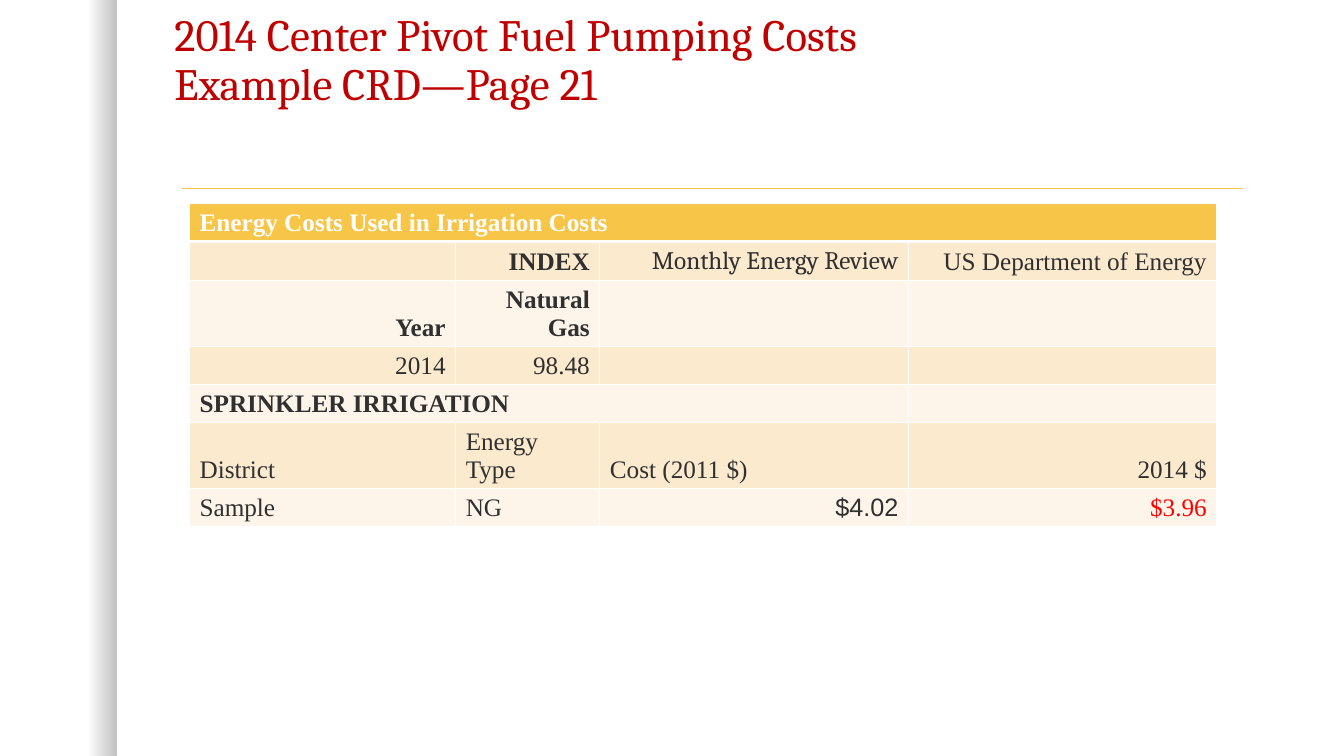
from lxml.etree import SubElement
from pptx import Presentation
from pptx.dml.color import RGBColor
from pptx.enum.shapes import MSO_CONNECTOR, MSO_SHAPE
from pptx.enum.text import MSO_ANCHOR, MSO_AUTO_SIZE, PP_ALIGN
from pptx.oxml.ns import qn
from pptx.util import Inches, Pt

GOLD, WHITE, INK, RED = "F7C547", "FFFFFF", "303030", "FF0000"
BANDS = ("FDF5E9", "FCEACF")
SERIF = "Times New Roman"
LEFT, RIGHT = PP_ALIGN.LEFT, PP_ALIGN.RIGHT

COLUMN_WIDTHS = (2.64, 1.43, 3.06, 3.06)
ROW_HEIGHT = 0.33
MERGED_COLUMNS = {0: 4, 4: 3}  # row: number of columns its first cell spans
ENERGY_COSTS = (
    ("Energy Costs Used in Irrigation Costs", "", "", ""),
    ("", "INDEX", "Monthly Energy Review", "US Department of Energy"),
    ("Year", "Natural Gas", "", ""),
    ("2014", "98.48", "", ""),
    ("SPRINKLER IRRIGATION", "", "", ""),
    ("District", "Energy Type", "Cost (2011 $)", "2014 $"),
    ("Sample", "NG", "$4.02", "$3.96"),
)
BOLD_TEXTS = {ENERGY_COSTS[0][0], "INDEX", "Year", "Natural Gas", "SPRINKLER IRRIGATION"}
LEFT_TEXTS = {ENERGY_COSTS[0][0], "SPRINKLER IRRIGATION", "District", "Energy Type",
              "Cost (2011 $)", "Sample", "NG"}
SPECIAL_FONTS = {"Monthly Energy Review": "Cambria", "$4.02": "Arial"}


def color(hex_value):
    return RGBColor.from_string(hex_value)


def add_edge_shade(slide, left, top, width, height):
    """Fade from clear to a quarter-black along the right edge of the box."""
    shade = slide.shapes.add_shape(
        MSO_SHAPE.RECTANGLE, Inches(left), Inches(top), Inches(width), Inches(height))
    shade.shadow.inherit = False
    shade.line.fill.background()
    shade.fill.gradient()
    shade.fill.gradient_angle = 0
    for stop, (position, opacity) in zip(shade.fill.gradient_stops, ((0.75, 0), (1, 25))):
        stop.position = position
        stop.color.rgb = color("000000")
        stop.color.brightness = 0
    for tone, opacity in zip(shade.element.spPr.iter(qn("a:srgbClr")), (0, 25)):
        SubElement(tone, qn("a:alpha"), val=str(opacity * 1000))


def add_rule(slide, left, top, width):
    rule = slide.shapes.add_connector(
        MSO_CONNECTOR.STRAIGHT, Inches(left), Inches(top), Inches(left + width), Inches(top))
    rule.line.color.rgb = color(GOLD)
    rule.line.width = Pt(1)
    SubElement(rule.element.spPr, qn("a:effectLst"))


def place_title(slide, lines, left, top, width, height):
    title = slide.shapes.title
    title.left, title.top = Inches(left), Inches(top)
    title.width, title.height = Inches(width), Inches(height)
    frame = title.text_frame
    frame.auto_size = MSO_AUTO_SIZE.NONE
    frame.word_wrap = True
    frame.vertical_anchor = MSO_ANCHOR.BOTTOM
    heading = frame.paragraphs[0]
    heading.alignment = LEFT
    heading.line_spacing = 0.9
    for index, line in enumerate(lines):
        if index:
            heading.add_line_break()
        run = heading.add_run()
        run.text = line
        run.font.size, run.font.name = Pt(32), "Cambria"
        run.font.color.rgb = color("C00000")


def set_borders(cell, bottom_width):
    properties = cell._tc.get_or_add_tcPr()
    for side, width in (("L", 1), ("R", 1), ("T", 1), ("B", bottom_width)):
        border = SubElement(properties, qn(f"a:ln{side}"), w=str(Pt(width)))
        SubElement(SubElement(border, qn("a:solidFill")), qn("a:srgbClr"), val=WHITE)


def write_cell(cell, text, text_color):
    cell.vertical_anchor = MSO_ANCHOR.BOTTOM
    paragraph = cell.text_frame.paragraphs[0]
    if not text:
        # Keeps an empty cell from growing its row.
        ending = SubElement(paragraph._p, qn("a:endParaRPr"), sz="1800")
        SubElement(ending, qn("a:latin"), typeface=SERIF)
        return
    paragraph.alignment = LEFT if text in LEFT_TEXTS else RIGHT
    run = paragraph.add_run()
    run.text = text
    run.font.size = Pt(18)
    run.font.name = SPECIAL_FONTS.get(text, SERIF)
    run.font.bold = text in BOLD_TEXTS
    run.font.color.rgb = color(text_color)


def add_cost_table(slide, left, top):
    table = slide.shapes.add_table(
        len(ENERGY_COSTS), len(COLUMN_WIDTHS), Inches(left), Inches(top),
        Inches(sum(COLUMN_WIDTHS)), Inches(ROW_HEIGHT * len(ENERGY_COSTS))).table
    for column, width in zip(table.columns, COLUMN_WIDTHS):
        column.width = Inches(width)
    for row, texts in enumerate(ENERGY_COSTS):
        table.rows[row].height = Inches(ROW_HEIGHT)
        for column, text in enumerate(texts):
            cell = table.cell(row, column)
            set_borders(cell, 1 if row else 3)
            cell.fill.solid()
            cell.fill.fore_color.rgb = color(BANDS[row % 2] if row else GOLD)
            text_color = RED if text == "$3.96" else INK
            write_cell(cell, text, text_color if row else WHITE)
    for row, span in MERGED_COLUMNS.items():
        table.cell(row, 0).merge(table.cell(row, span - 1))


def build_cost_slide(presentation):
    slide = presentation.slides.add_slide(presentation.slide_layouts[5])
    add_edge_shade(slide, 0, 0, 1.16, 7.5)
    add_rule(slide, 1.81, 1.87, 10.52)
    place_title(slide, ("2014 Center Pivot Fuel Pumping Costs", "Example CRD—Page 21"),
                1.63, -0.17, 10.78, 1.31)
    add_cost_table(slide, 1.88, 2.02)


def main():
    presentation = Presentation()
    presentation.slide_width, presentation.slide_height = Inches(13.33), Inches(7.5)
    build_cost_slide(presentation)
    presentation.save("out.pptx")


if __name__ == "__main__":
    main()
